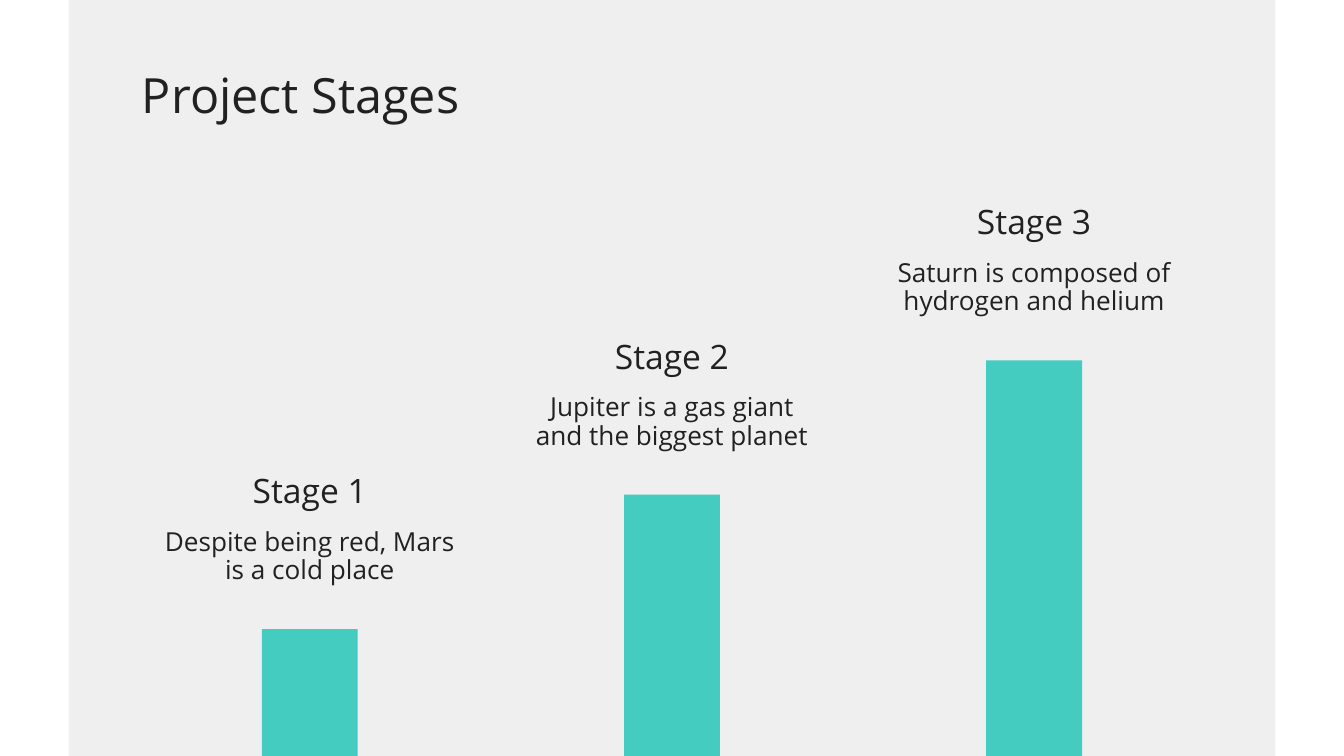
from dataclasses import dataclass

from pptx import Presentation
from pptx.dml.color import RGBColor
from pptx.enum.shapes import MSO_SHAPE
from pptx.enum.text import MSO_ANCHOR, PP_ALIGN
from pptx.util import Pt

RECT = MSO_SHAPE.RECTANGLE
TOP = MSO_ANCHOR.TOP
LEFT, CENTER = PP_ALIGN.LEFT, PP_ALIGN.CENTER

WIDTH, HEIGHT = 720, 405
STAGES = [
    ("Stage 1", "Despite being red, Mars is a cold place"),
    ("Stage 2", "Jupiter is a gas giant and the biggest planet"),
    ("Stage 3", "Saturn is composed of hydrogen and helium"),
]


@dataclass(frozen=True)
class Theme:
    """Colours, font and type sizes of the slide."""
    panel: str = "EFEFEF"
    bar: str = "44CCC0"
    ink: str = "212121"
    font: str = "Open Sans"
    title: int = 26
    head: int = 18
    body: int = 14


THEME = Theme()


def add_block(slide, left, top, width, height, color):
    """Draw a plain filled rectangle."""
    block = slide.shapes.add_shape(
        RECT, Pt(left), Pt(top), Pt(width), Pt(height))
    block.shadow.inherit = False
    block.fill.solid()
    block.fill.fore_color.rgb = RGBColor.from_string(color)
    block.line.fill.background()


def add_label(slide, left, top, width, height, text, size, align=CENTER):
    """Write one wrapped paragraph in a text box."""
    box = slide.shapes.add_textbox(Pt(left), Pt(top), Pt(width), Pt(height))
    frame = box.text_frame
    frame.word_wrap = True
    frame.vertical_anchor = TOP
    frame.margin_left = frame.margin_right = Pt(7.2)
    frame.margin_top = frame.margin_bottom = Pt(7.2)
    para = frame.paragraphs[0]
    para.alignment = align
    para.line_spacing = 0.9
    run = para.add_run()
    run.text = text
    run.font.name = THEME.font
    run.font.size = Pt(size)
    run.font.color.rgb = RGBColor.from_string(THEME.ink)


def add_stage(slide, mid, top, head, body):
    """Place a heading and a text above a bar that reaches the slide's foot."""
    width, bar = 170.6, 51.4
    left = mid - width / 2
    add_label(slide, left, top, width, 35, head, THEME.head)
    add_label(slide, left, top + 29, width, 49, body, THEME.body)
    start = top + 90
    add_block(slide, mid - bar / 2, start, bar, HEIGHT - start, THEME.bar)


def main():
    """Build the slide and save it."""
    deck = Presentation()
    deck.slide_width, deck.slide_height = Pt(WIDTH), Pt(HEIGHT)
    slide = deck.slides.add_slide(deck.slide_layouts[6])
    add_block(slide, 36.8, 0, WIDTH - 2 * 36.8, HEIGHT, THEME.panel)
    add_label(slide, 69, 31, 221, 60, "Project Stages", THEME.title, LEFT)
    for i, (head, body) in enumerate(STAGES):
        add_stage(slide, WIDTH / 2 + (i - 1) * 194, 247 - i * 72, head, body)
    deck.save("out.pptx")


if __name__ == "__main__":
    main()
